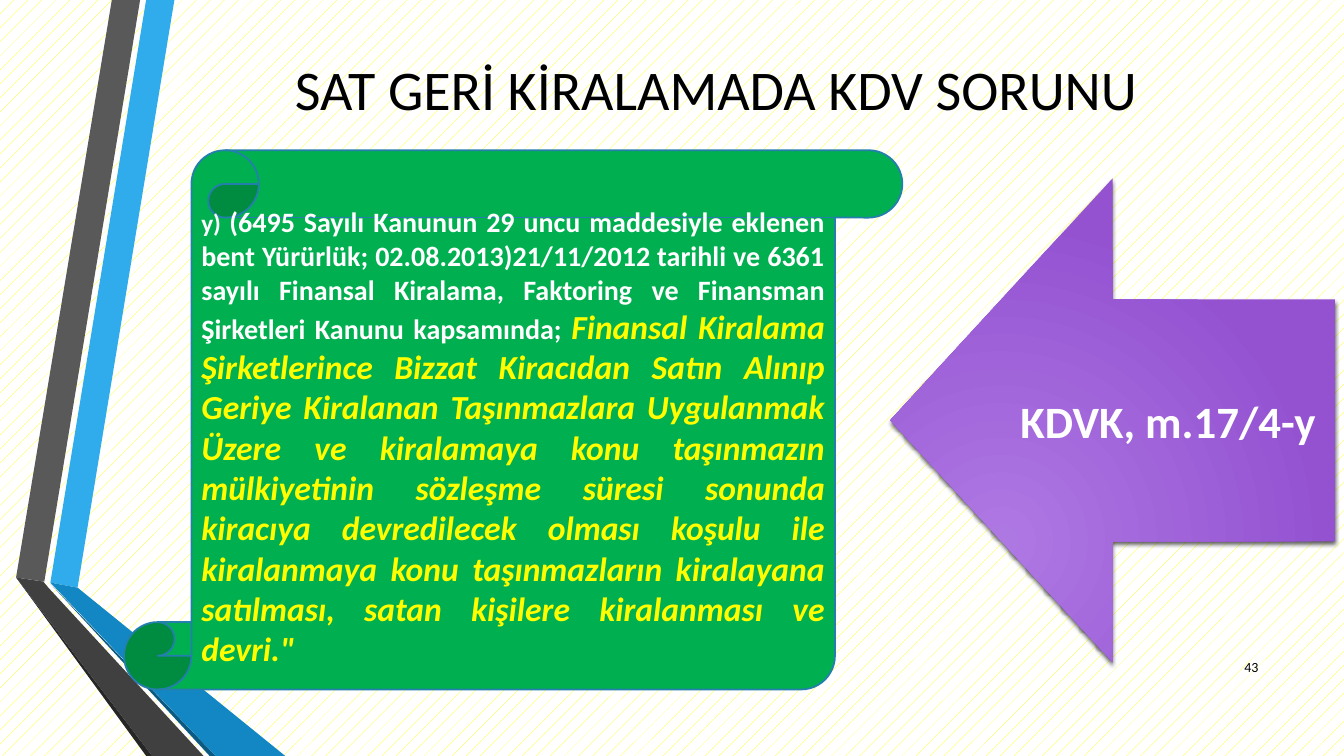
"""Build the slide on VAT in sale and leaseback."""
from lxml import etree
from pptx import Presentation
from pptx.dml.color import RGBColor
from pptx.enum.dml import MSO_PATTERN
from pptx.enum.shapes import MSO_SHAPE
from pptx.enum.text import MSO_ANCHOR, PP_ALIGN
from pptx.oxml import parse_xml
from pptx.oxml.ns import qn
from pptx.util import Inches, Pt

PCT5 = MSO_PATTERN.PERCENT_5
LEFT_ARROW, SCROLL = MSO_SHAPE.LEFT_ARROW, MSO_SHAPE.VERTICAL_SCROLL
MIDDLE = MSO_ANCHOR.MIDDLE
CENTER, RIGHT, JUSTIFY = PP_ALIGN.CENTER, PP_ALIGN.RIGHT, PP_ALIGN.JUSTIFY
NS = "http://schemas.openxmlformats.org/drawingml/2006/main"


def rgb(value):
    return RGBColor.from_string(value)


def write(sp, align, runs):
    tf = sp.text_frame
    tf.word_wrap = True
    tf.vertical_anchor = MIDDLE
    p = tf.paragraphs[0]
    p.alignment = align
    for text, color, fmt in runs:
        r = p.add_run()
        r.text = text
        r.font.name = "Calibri"
        r.font.color.rgb = rgb(color)
        for name, value in fmt.items():
            setattr(r.font, name, value)


prs = Presentation()
prs.slide_width, prs.slide_height = Inches(13.33), Inches(7.5)
s = prs.slides.add_slide(prs.slide_layouts[5])

bg = s.background.fill
bg.patterned()
bg.pattern = PCT5
bg.fore_color.rgb = rgb("FFFF00")
bg.back_color.rgb = rgb("FFFFFF")

ribbons = [
    ("30ACEC", [(0.5, 5.78), (0.77, 5.83), (1.73, 0), (1.45, 0)]),
    ("595959", [(1.39, 0), (1.11, 0), (0.16, 5.73), (0.44, 5.77)]),
    ("262626", [(0.16, 5.73), (1.45, 7.5), (1.51, 7.5)]),
    ("0C5A82", [(0.5, 5.79), (2.08, 7.5), (2.14, 7.5)]),
    ("1287C3", [(0.5, 5.78), (2.14, 7.5), (2.83, 7.5), (0.77, 5.83)]),
    ("404040", [(2.02, 7.5), (0.48, 5.83), (0.43, 5.77), (0.16, 5.73), (1.51, 7.5)]),
]
for color, points in ribbons:
    corners = [(Inches(x), Inches(y)) for x, y in points]
    fb = s.shapes.build_freeform(*corners[0])
    fb.add_line_segments(corners[1:], close=True)
    sp = fb.convert_to_shape()
    sp.shadow.inherit = False
    sp.fill.solid()
    sp.fill.fore_color.rgb = rgb(color)
    sp.line.fill.background()

title = s.shapes.title
title.left, title.top = Inches(1.62), Inches(0.36)
title.width, title.height = Inches(10.96), Inches(1.03)
write(title, CENTER, [("SAT GERİ KİRALAMADA KDV SORUNU", "000000", {"size": Pt(40)})])

number = s.shapes.add_textbox(Inches(11.98), Inches(6.42), Inches(0.6), Inches(0.4))
write(number, RIGHT, [("43", "000000", {"size": Pt(10)})])

arrow = s.shapes.add_shape(LEFT_ARROW, Inches(8.83), Inches(1.77), Inches(4.41), Inches(4.8))
arrow.shadow.inherit = False
arrow.line.fill.background()
arrow.fill.gradient()
grad = arrow.fill.gradient_stops
for stop, color, position in zip(grad, ("AE78E3", "9452D1"), (0, 1)):
    stop.color.rgb = rgb(color)
    stop.position = position
grad_fill = arrow._element.spPr.find(qn("a:gradFill"))
grad_fill.replace(grad_fill.find(qn("a:lin")), parse_xml(
    f'<a:path xmlns:a="{NS}" path="circle">'
    '<a:fillToRect l="50000" t="100000" r="100000" b="50000"/></a:path>'))
effects = arrow._element.spPr.find(qn("a:effectLst"))
shadow = etree.SubElement(effects, qn("a:outerShdw"), blurRad=str(Pt(3)),
                          dist=str(Pt(2)), dir="5400000", rotWithShape="0")
tint = etree.SubElement(shadow, qn("a:srgbClr"), val="000000")
etree.SubElement(tint, qn("a:alpha"), val="64000")
write(arrow, CENTER, [("KDVK, m.17/4-y", "FFFFFF", {"size": Pt(32), "bold": True})])

scroll = s.shapes.add_shape(SCROLL, Inches(1.23), Inches(1.49), Inches(7.72), Inches(5.35))
scroll.shadow.inherit = False
scroll.fill.solid()
scroll.fill.fore_color.rgb = rgb("00B050")
scroll.line.color.rgb = rgb("247FAF")
scroll.line.width = Pt(1.25)
write(scroll, JUSTIFY, [
    ("y) ", "FFFFFF", {"size": Pt(18), "bold": True}),
    ("(6495 Sayılı Kanunun 29 uncu maddesiyle eklenen bent Yürürlük; "
     "02.08.2013)21/11/2012 tarihli ve 6361 sayılı Finansal Kiralama, Faktoring ve "
     "Finansman Şirketleri Kanunu kapsamında; ",
     "FFFFFF", {"size": Pt(20), "bold": True}),
    ("Finansal Kiralama Şirketlerince Bizzat Kiracıdan Satın Alınıp Geriye Kiralanan "
     "Taşınmazlara Uygulanmak Üzere ve kiralamaya konu taşınmazın mülkiyetinin sözleşme "
     "süresi sonunda kiracıya devredilecek olması koşulu ile kiralanmaya konu "
     "taşınmazların kiralayana satılması, satan kişilere kiralanması ve devri.\"",
     "FFFF00", {"size": Pt(24), "bold": True, "italic": True}),
])

prs.save("out.pptx")
